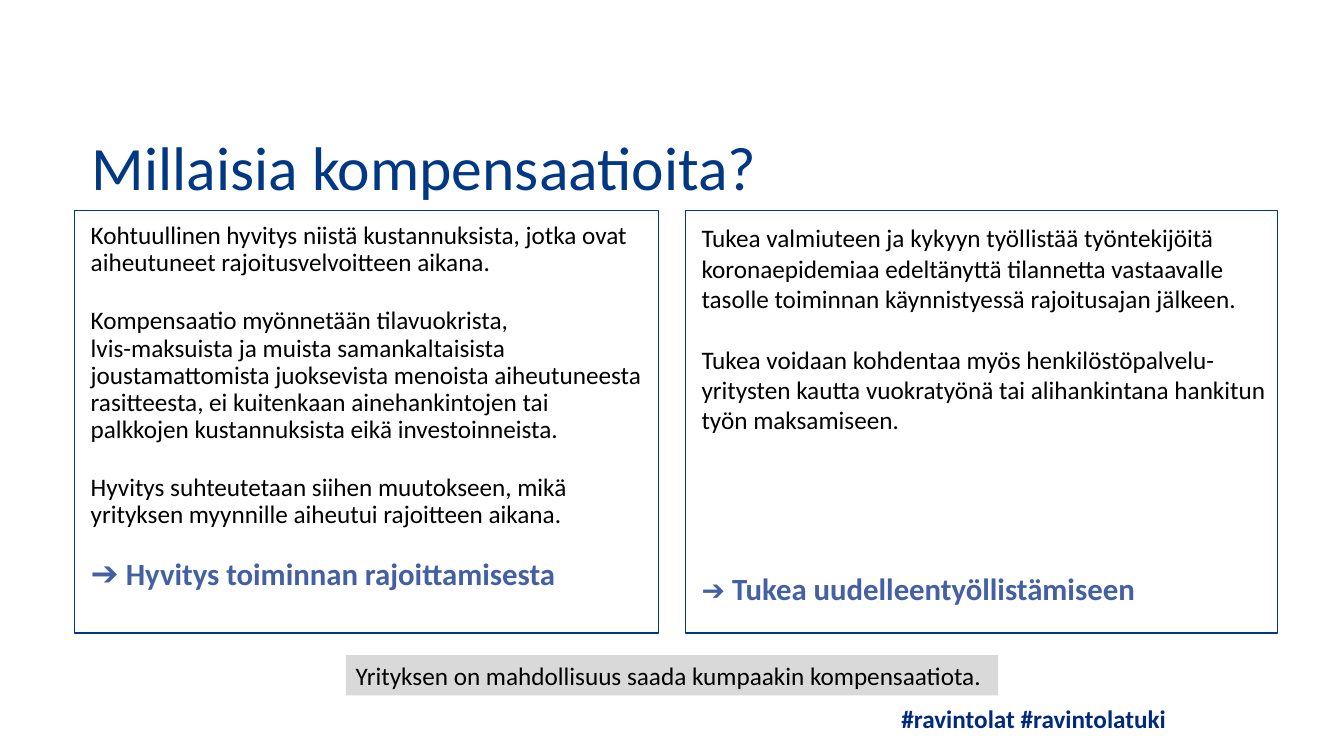
from pptx import Presentation
from pptx.dml.color import RGBColor
from pptx.enum.shapes import MSO_SHAPE as Preset
from pptx.enum.text import MSO_ANCHOR as Anchor, PP_ALIGN as Align
from pptx.util import Inches, Pt

NAVY, ACCENT, BLACK = "003883", "4460A5", "000000"
PANEL_TOP, PANEL_HEIGHT = 27.87, 55.87


def color(hex_code):
    return RGBColor.from_string(hex_code)


def write(paragraph, text, size=18, hue=BLACK, bold=False, font="Calibri"):
    for index, line in enumerate(text.split("\n")):
        if index:
            paragraph.add_line_break()
        run = paragraph.add_run()
        run.text = line
        run.font.name = font
        run.font.size = Pt(size)
        run.font.bold = bold
        run.font.color.rgb = color(hue)


class CompensationSlide:
    def __init__(self):
        self.deck = Presentation()
        self.deck.slide_width, self.deck.slide_height = Inches(13.33), Inches(7.5)
        self.slide = self.deck.slides.add_slide(self.deck.slide_layouts[5])

    def area(self, left, top, width, height):
        across, down = self.deck.slide_width / 100, self.deck.slide_height / 100
        return [int(share * unit) for share, unit in
                zip((left, top, width, height), (across, down, across, down))]

    def prepare(self, frame, insets=(0.1, 0.05, 0.1, 0.05)):
        frame.word_wrap = True
        frame.vertical_anchor = Anchor.TOP
        (frame.margin_left, frame.margin_top,
         frame.margin_right, frame.margin_bottom) = map(Inches, insets)
        frame.paragraphs[0].alignment = Align.LEFT
        return frame

    def title(self, text, area):
        heading = self.slide.shapes.title
        heading.left, heading.top, heading.width, heading.height = self.area(*area)
        paragraph = self.prepare(heading.text_frame).paragraphs[0]
        paragraph.line_spacing = 0.9
        write(paragraph, text, size=44, hue=NAVY)

    def box(self, area, fill=None, line=None):
        shape = self.slide.shapes.add_shape(Preset.RECTANGLE, *self.area(*area))
        shape.shadow.inherit = False
        if fill:
            shape.fill.solid()
            shape.fill.fore_color.rgb = color(fill)
        else:
            shape.fill.background()
        if line:
            shape.line.color.rgb = color(line)
            shape.line.width = Pt(0.75)
        else:
            shape.line.fill.background()
        return shape

    def panel(self, left, width, reasons, outcome, arrow_size, outcome_gap, spacing):
        panel = self.box((left, PANEL_TOP, width, PANEL_HEIGHT), line=NAVY)
        frame = self.prepare(panel.text_frame, (0.16, 0.12, 0.1, 0.05))
        for index, reason in enumerate(reasons + [outcome]):
            paragraph = frame.add_paragraph() if index else frame.paragraphs[0]
            paragraph.alignment = Align.LEFT
            paragraph.line_spacing = spacing
            paragraph.space_after = Pt(12)
            if index:
                paragraph.space_before = Pt(10)
            if reason is outcome:
                paragraph.space_before = Pt(outcome_gap)
                write(paragraph, "➔", size=arrow_size, hue=ACCENT)
                write(paragraph, " " + outcome, size=22, hue=ACCENT, bold=True)
            else:
                write(paragraph, reason)

    def note(self, text, area, fill):
        note = self.box(area, fill=fill)
        write(self.prepare(note.text_frame).paragraphs[0], text)

    def label(self, text, area, hue):
        label = self.slide.shapes.add_textbox(*self.area(*area))
        write(self.prepare(label.text_frame).paragraphs[0], text, hue=hue, bold=True)


def main():
    page = CompensationSlide()
    page.title("Millaisia kompensaatioita?", (6.08, 17.47, 70.88, 12.13))
    page.panel(
        5.55, 43.43,
        ["Kohtuullinen hyvitys niistä kustannuksista, jotka ovat aiheutuneet "
         "rajoitusvelvoitteen aikana.",
         "Kompensaatio myönnetään tilavuokrista,\nlvis-maksuista ja muista "
         "samankaltaisista joustamattomista juoksevista menoista aiheutuneesta "
         "rasitteesta, ei kuitenkaan ainehankintojen tai palkkojen kustannuksista "
         "eikä investoinneista.",
         "Hyvitys suhteutetaan siihen muutokseen, mikä yrityksen myynnille aiheutui "
         "rajoitteen aikana."],
        "Hyvitys toiminnan rajoittamisesta",
        arrow_size=24, outcome_gap=7.5, spacing=0.9)
    page.panel(
        51, 44.03,
        ["Tukea valmiuteen ja kykyyn työllistää työntekijöitä koronaepidemiaa "
         "edeltänyttä tilannetta vastaavalle tasolle toiminnan käynnistyessä "
         "rajoitusajan jälkeen.",
         "Tukea voidaan kohdentaa myös henkilöstöpalvelu-yritysten kautta "
         "vuokratyönä tai alihankintana hankitun työn maksamiseen."],
        "Tukea uudelleentyöllistämiseen",
        arrow_size=20, outcome_gap=84, spacing=1.0)
    page.note("Yrityksen on mahdollisuus saada kumpaakin kompensaatiota.",
              (25.73, 86.67, 48.53, 5.33), "D9D9D9")
    page.label("#ravintolat #ravintolatuki", (66.32, 92.4, 21.38, 5.33), "00297F")
    page.deck.save("out.pptx")


if __name__ == "__main__":
    main()
